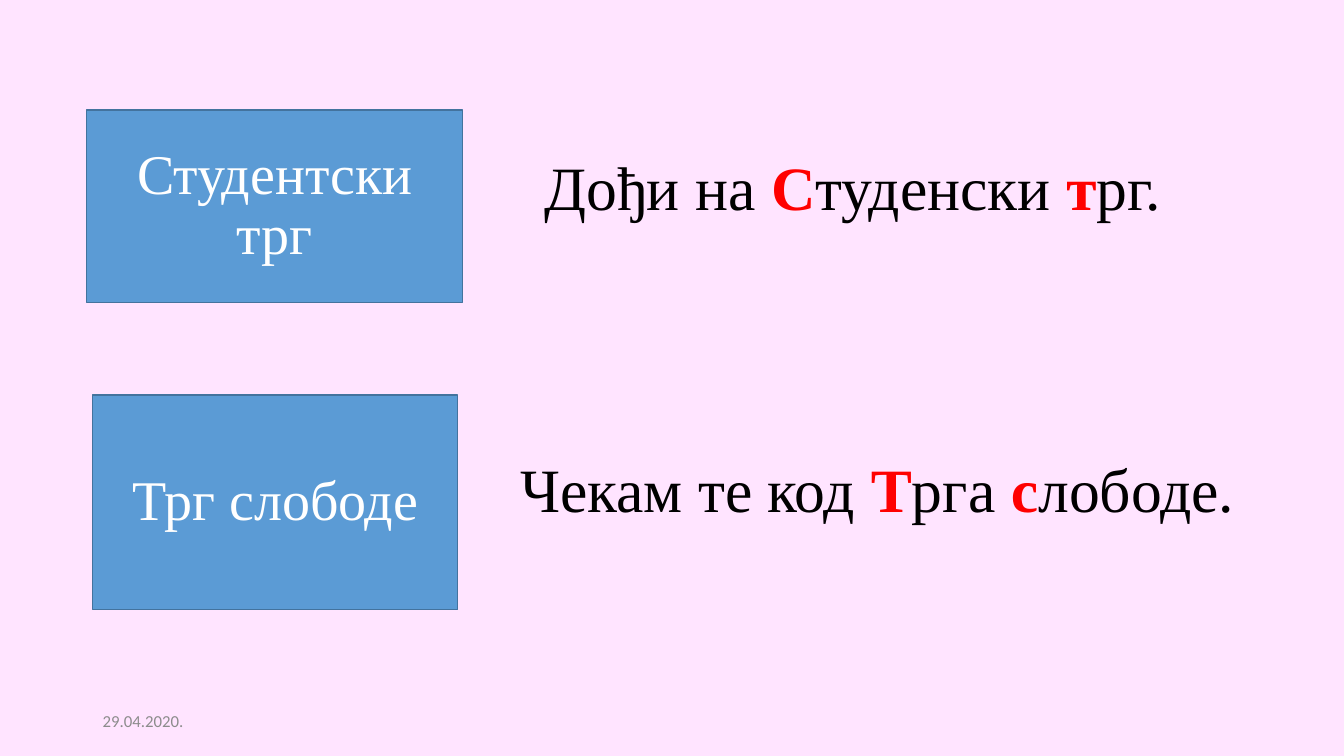
from pptx import Presentation
from pptx.dml.color import RGBColor
from pptx.enum.shapes import MSO_SHAPE as SHAPE
from pptx.enum.text import MSO_ANCHOR as ANCHOR, PP_ALIGN as ALIGN
from pptx.util import Inches, Pt

SERIF = "Times New Roman"


def color(hex_code):
    return RGBColor.from_string(hex_code)


def style(r, size, hex_code, font=SERIF, bold=False):
    r.font.name = font
    r.font.size = Pt(size)
    r.font.bold = bold
    r.font.color.rgb = color(hex_code)


def add_name_box(slide, box, name):
    """Blue rectangle with the name of a square."""
    sp = slide.shapes.add_shape(SHAPE.RECTANGLE, *map(Inches, box))
    sp.shadow.inherit = False
    sp.fill.solid()
    sp.fill.fore_color.rgb = color("5B9BD5")
    sp.line.color.rgb = color("43739E")
    sp.line.width = Pt(1)
    tf = sp.text_frame
    tf.word_wrap = True
    tf.vertical_anchor = ANCHOR.MIDDLE
    p = tf.paragraphs[0]
    p.text = name
    p.alignment = ALIGN.CENTER
    p.line_spacing = 0.9
    style(p.runs[0], 40, "FFFFFF")


def add_sentence(slide, box, parts):
    """Sentence whose every second part is a highlighted letter."""
    tf = slide.shapes.add_textbox(*map(Inches, box)).text_frame
    tf.word_wrap = False
    p = tf.paragraphs[0]
    for i, part in enumerate(parts):
        r = p.add_run()
        r.text = part
        marked = i % 2 == 1
        style(r, 44, "FF0000" if marked else "000000", bold=marked)


def add_date(slide, box, date):
    tf = slide.shapes.add_textbox(*map(Inches, box)).text_frame
    tf.word_wrap = True
    tf.vertical_anchor = ANCHOR.MIDDLE
    tf.text = date
    style(tf.paragraphs[0].runs[0], 12, "8C8C8C", font="Calibri")


def main():
    prs = Presentation()
    prs.slide_width = Inches(13.33)
    prs.slide_height = Inches(7.5)
    slide = prs.slides.add_slide(prs.slide_layouts[6])

    # Background
    fill = slide.background.fill
    fill.solid()
    fill.fore_color.rgb = color("FFE4FF")

    # First square
    add_name_box(slide, (0.86, 1.09, 3.73, 1.91), "Студентски трг")
    add_sentence(slide, (5.3, 1.43, 6.52, 0.84),
                 ("Дођи на ", "С", "туденски ", "т", "рг."))

    # Second square
    add_name_box(slide, (0.92, 3.92, 3.62, 2.13), "Трг слободе")
    add_sentence(slide, (5.06, 4.42, 7.35, 0.84),
                 ("Чекам те код ", "Т", "рга ", "с", "лободе."))

    # Footer
    add_date(slide, (0.92, 6.95, 3, 0.4), "29.04.2020.")

    prs.save("out.pptx")


if __name__ == "__main__":
    main()
